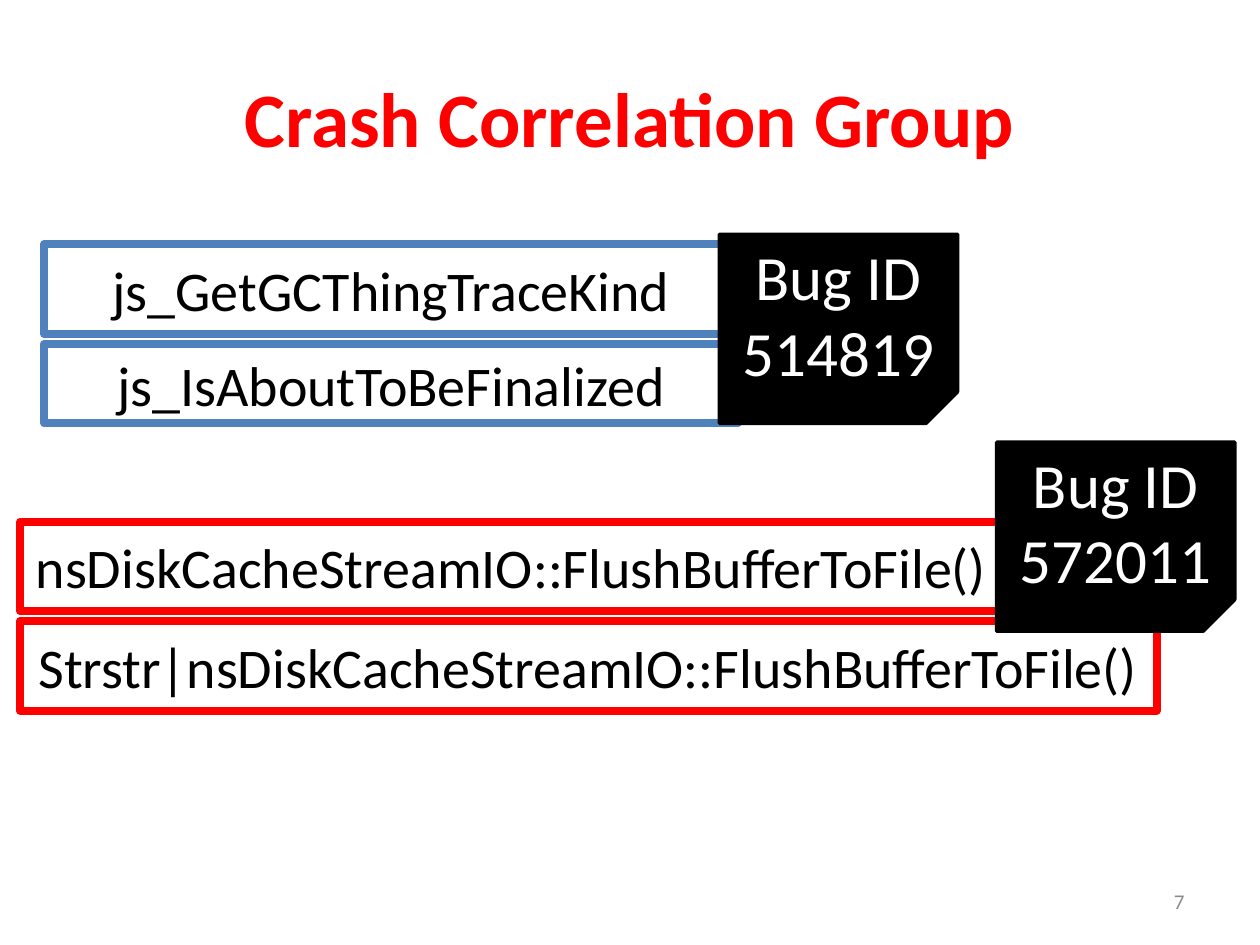
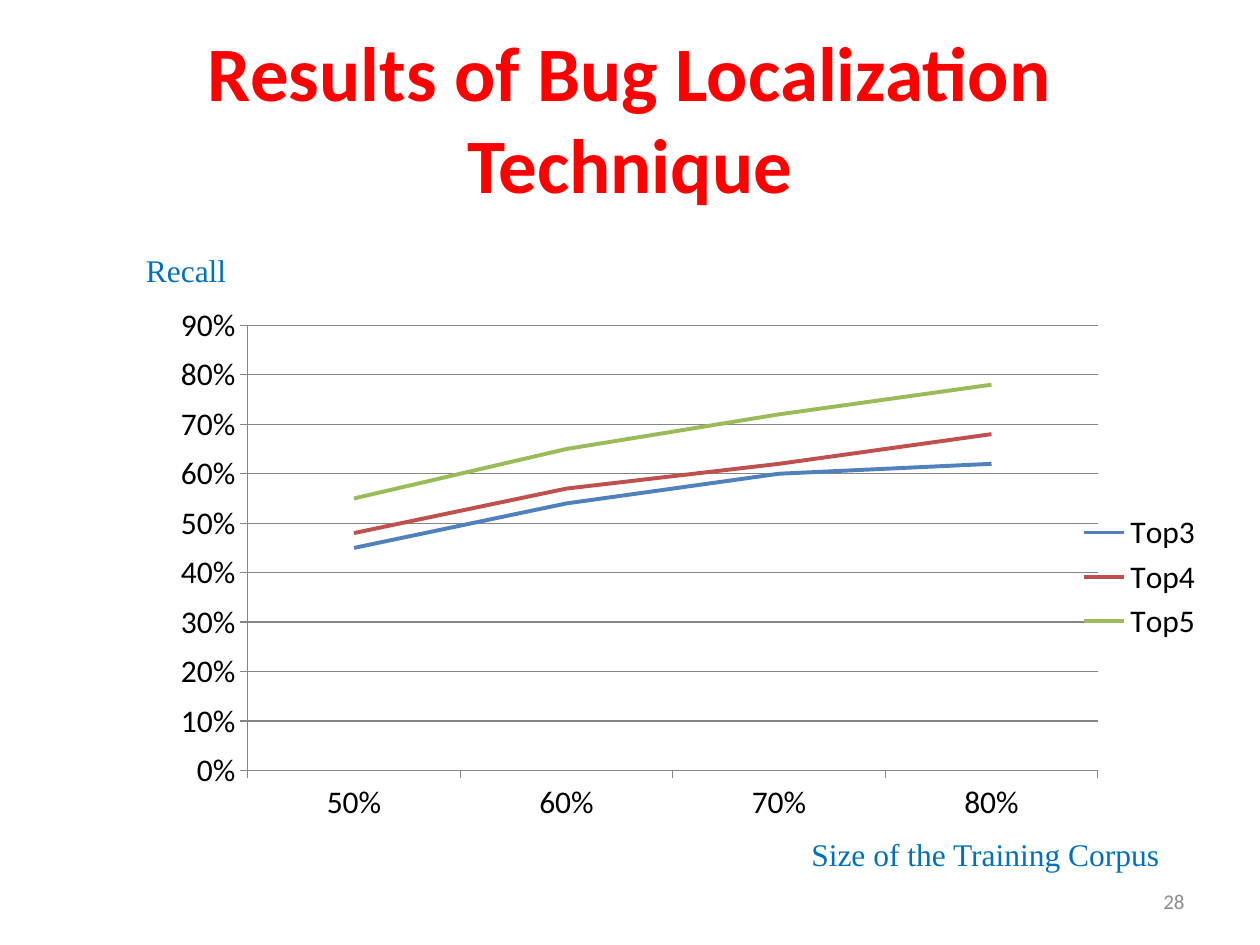
from dataclasses import dataclass

from lxml import etree
from pptx import Presentation
from pptx.chart.data import CategoryChartData
from pptx.dml.color import RGBColor as RGB
from pptx.enum.chart import XL_CHART_TYPE as Chart, XL_LEGEND_POSITION as Legend
from pptx.enum.chart import XL_TICK_MARK as Tick
from pptx.enum.shapes import MSO_SHAPE as Shape
from pptx.enum.text import MSO_ANCHOR as Anchor, PP_ALIGN as Align
from pptx.oxml.ns import qn
from pptx.util import Inches, Pt

WIDTH, HEIGHT = Inches(10), Inches(7.5)
TITLE_ONLY = 5


@dataclass(frozen=True)
class Theme:
    font: str = "Calibri"
    label_font: str = "Times New Roman"
    red: RGB = RGB(0xFF, 0, 0)
    blue: RGB = RGB(0x4F, 0x81, 0xBD)
    label: RGB = RGB(0, 0x70, 0xC0)
    black: RGB = RGB(0, 0, 0)
    white: RGB = RGB(0xFF, 0xFF, 0xFF)
    grey: RGB = RGB(0x8C, 0x8C, 0x8C)
    axis: RGB = RGB(0x86, 0x86, 0x86)
    series: tuple = (blue, RGB(0xC0, 0x50, 0x4D), RGB(0x9B, 0xBB, 0x59))
    title_size: int = 44
    badge_size: int = 36
    signature_size: int = 32
    label_size: int = 18
    number_size: int = 12


THEME = Theme()


def area(left, top, width, height):
    """Turn percentages of the slide into lengths."""
    return (int(WIDTH * left / 100), int(HEIGHT * top / 100),
            int(WIDTH * width / 100), int(HEIGHT * height / 100))


def style_font(font, size, color, name=THEME.font, bold=False):
    font.name, font.size, font.bold = name, Pt(size), bold
    font.color.rgb = color


def write(sp, text, size, color, align=Align.CENTER, anchor=Anchor.MIDDLE,
          name=THEME.font, bold=False):
    tf = sp.text_frame
    tf.word_wrap = True
    tf.vertical_anchor = anchor
    p = tf.paragraphs[0]
    p.text, p.alignment = text, align
    style_font(p.font, size, color, name, bold)


def add_slide(prs, title, number):
    s = prs.slides.add_slide(prs.slide_layouts[TITLE_ONLY])
    write(s.shapes.title, title, THEME.title_size, THEME.red, bold=True)
    sp = s.shapes.add_textbox(*area(71.7, 92.67, 23.3, 5.33))
    write(sp, str(number), THEME.number_size, THEME.grey, Align.RIGHT)
    return s


def add_box(s, kind, at, text, size, color, fill, line, line_width):
    sp = s.shapes.add_shape(kind, *area(*at))
    sp.shadow.inherit = False
    sp.fill.solid()
    sp.fill.fore_color.rgb = fill
    sp.line.color.rgb = line
    sp.line.width = Pt(line_width)
    write(sp, text, size, color)


def add_crash_group(s, left, top, signatures, line, badge_at, bug_id):
    """Stack (text, width, height) signatures and put the bug's badge on top."""
    pitch = 10.53
    for row, (text, width, height) in enumerate(signatures):
        add_box(s, Shape.RECTANGLE, (left, top + row * pitch, width, height), text,
                THEME.signature_size, THEME.black, THEME.white, line, 4.5)
    add_box(s, Shape.FOLDED_CORNER, (*badge_at, 18.9, 20), f"Bug ID {bug_id}",
            THEME.badge_size, THEME.white, THEME.black, THEME.black, 2)


def add_axis_label(s, text, left, top, width):
    sp = s.shapes.add_textbox(*area(left, top, width, 5.33))
    write(sp, text, THEME.label_size, THEME.label, Align.LEFT, Anchor.TOP,
          THEME.label_font)


def place_plot(chart, **shares):
    """Fix the inner plot area at shares of the chart's size."""
    plot_area = chart._chartSpace.find(".//" + qn("c:plotArea"))
    for old in plot_area.findall(qn("c:layout")):
        plot_area.remove(old)
    layout = etree.Element(qn("c:layout"))
    manual = etree.SubElement(layout, qn("c:manualLayout"))
    settings = {"layoutTarget": "inner", "xMode": "edge", "yMode": "edge", **shares}
    for tag, value in settings.items():
        etree.SubElement(manual, qn(f"c:{tag}")).set("val", str(value))
    plot_area.insert(0, layout)


def style_axis(axis):
    axis.major_tick_mark, axis.minor_tick_mark = Tick.OUTSIDE, Tick.NONE
    axis.format.line.color.rgb = THEME.axis
    axis.tick_labels.number_format = "0%"
    axis.tick_labels.number_format_is_linked = False


def add_recall_chart(s, sizes, recalls):
    data = CategoryChartData(number_format="0%")
    data.categories = sizes
    data.categories.number_format = "0%"
    for name, values in recalls.items():
        data.add_series(name, values)
    at = area(2.8, 26.93, 93.7, 68.27)
    chart = s.shapes.add_chart(Chart.LINE, *at, data).chart
    chart.has_title = False
    style_font(chart.font, THEME.label_size, THEME.black)
    chart.has_legend = True
    chart.legend.position = Legend.RIGHT
    chart.legend.include_in_layout = False
    place_plot(chart, x=0.18, y=0.11, w=0.72, h=0.69)

    style_axis(chart.category_axis)
    recall_axis = chart.value_axis
    style_axis(recall_axis)
    recall_axis.minimum_scale, recall_axis.maximum_scale = 0, 0.9
    recall_axis.major_unit = 0.1
    recall_axis.has_major_gridlines = True
    recall_axis.major_gridlines.format.line.color.rgb = THEME.axis

    plot = chart.plots[0]
    plot.vary_by_categories = False
    for series, color in zip(plot.series, THEME.series):
        series.smooth = False
        series.format.line.color.rgb = color
        series.format.line.width = Pt(2.25)


def main():
    prs = Presentation()
    prs.slide_width, prs.slide_height = WIDTH, HEIGHT

    s = add_slide(prs, "Crash Correlation Group", 7)
    add_crash_group(s, 3.5, 25.87,
                    [("js_GetGCThingTraceKind", 55.1, 9.47),
                     ("js_IsAboutToBeFinalized", 55.1, 8.4)],
                    THEME.blue, (57.1, 24.8), 514819)
    flush = "nsDiskCacheStreamIO::FlushBufferToFile()"
    add_crash_group(s, 1.6, 55.2,
                    [(flush, 78, 9.47), (f"Strstr|{flush}", 90.2, 9.47)],
                    THEME.red, (79.1, 46.8), 572011)

    s = add_slide(prs, "Results of Bug Localization Technique", 28)
    add_axis_label(s, "Recall", 10.6, 25.87, 9.4)
    add_recall_chart(s, (0.5, 0.6, 0.7, 0.8), {
        "Top3": (0.45, 0.54, 0.6, 0.62),
        "Top4": (0.48, 0.57, 0.62, 0.68),
        "Top5": (0.55, 0.65, 0.72, 0.78),
    })
    add_axis_label(s, "Size of the Training Corpus", 63.4, 87.73, 33.5)

    prs.save("out.pptx")


if __name__ == "__main__":
    main()
